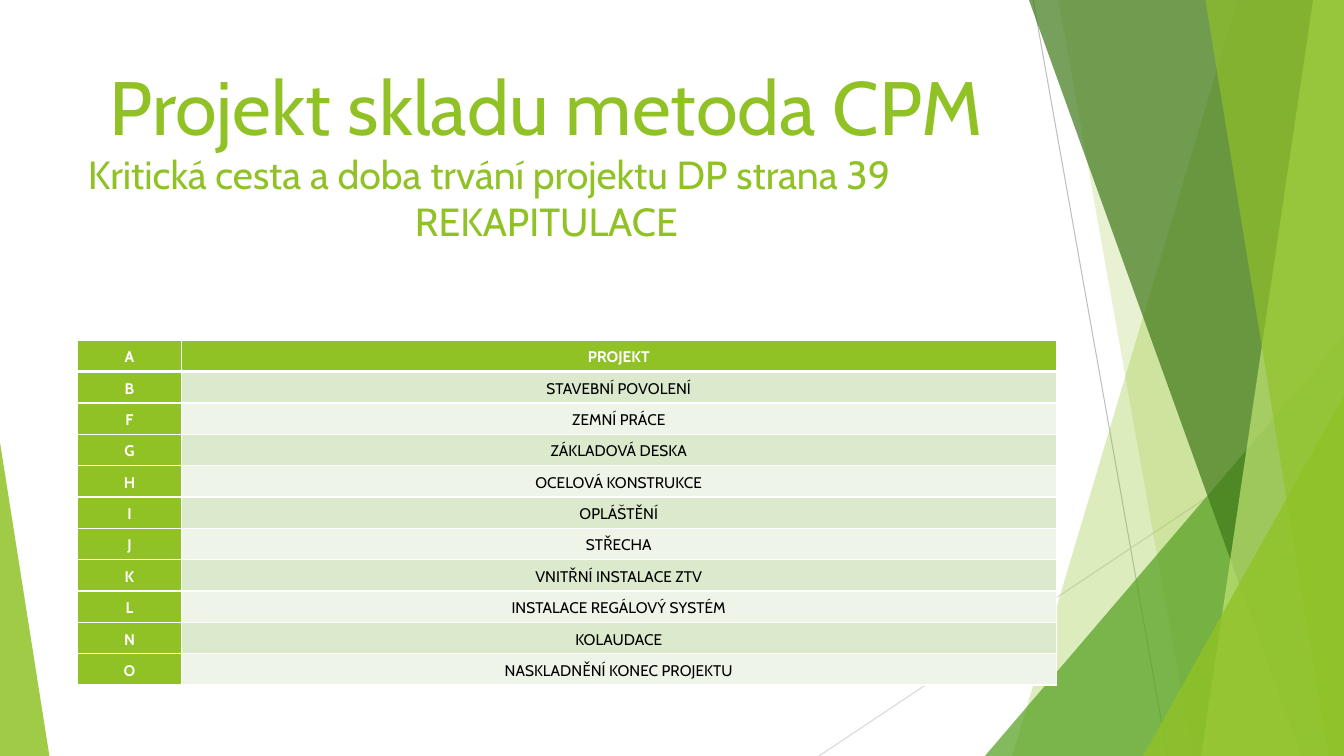
from lxml import etree
from pptx import Presentation
from pptx.dml.color import RGBColor
from pptx.enum.shapes import MSO_CONNECTOR, MSO_SHAPE
from pptx.enum.text import MSO_ANCHOR, MSO_AUTO_SIZE, PP_ALIGN
from pptx.oxml.ns import qn
from pptx.util import Pt

STRAIGHT = MSO_CONNECTOR.STRAIGHT
TRIANGLE = MSO_SHAPE.ISOSCELES_TRIANGLE
LEFT, CENTER = PP_ALIGN.LEFT, PP_ALIGN.CENTER
TOP, MIDDLE = MSO_ANCHOR.TOP, MSO_ANCHOR.MIDDLE

FONT = "Cabin"
WIDTH, HEIGHT = 960, 540
COLORS = {
    "green": "90C226", "leaf": "54A021", "forest": "3F7819", "lime": "C0E474",
    "band_dark": "DBE9CD", "band_light": "EEF4E8", "white": "FFFFFF",
    "black": "000000", "gray": "BFBFBF", "light_gray": "D9D9D9",
}


def rgb(name):
    return RGBColor.from_string(COLORS[name])


def style_font(p, size, color, bold=False):
    p.font.name = FONT
    p.font.size = Pt(size)
    p.font.bold = bold
    p.font.color.rgb = rgb(color)


prs = Presentation()
prs.slide_width, prs.slide_height = Pt(WIDTH), Pt(HEIGHT)
s = prs.slides.add_slide(prs.slide_layouts[5])

# Thin background lines
for x1, y1, x2, y2, color in [(738, 0, 834, HEIGHT, "gray"),
                              (WIDTH, 290, 585, HEIGHT, "light_gray")]:
    line = s.shapes.add_connector(STRAIGHT, Pt(x1), Pt(y1), Pt(x2), Pt(y2))
    line.line.color.rgb = rgb(color)
    line.line.width = Pt(0.75)
    etree.SubElement(line._element.spPr, qn("a:effectLst"))

# Facets: a band is (top x, bottom x) up to the right edge,
# a triangle is (left, top, width, apex) down to the bottom edge
facets = [
    ((884, 723), "green", 30),
    ((756, 852), "green", 20),
    ((703.5, 240, 256.5, 1), "leaf", 72),
    ((735, 929.5), "forest", 70),
    ((938, 858), "lime", 70),
    ((861, 949), "green", 65),
    ((816.5, 283, 143.5, 1), "green", 80),
    ((0, 316, 35.3, 0), "green", 85),
]
for geometry, color, opacity in facets:
    if len(geometry) == 2:
        top_x, bottom_x = geometry
        fb = s.shapes.build_freeform(Pt(top_x), Pt(0), scale=1.0)
        fb.add_line_segments([(Pt(WIDTH), Pt(0)), (Pt(WIDTH), Pt(HEIGHT)),
                              (Pt(bottom_x), Pt(HEIGHT))], close=True)
        sp = fb.convert_to_shape()
    else:
        x, y, w, apex = geometry
        sp = s.shapes.add_shape(TRIANGLE, Pt(x), Pt(y), Pt(w), Pt(HEIGHT - y))
        sp.adjustments[0] = apex
    sp.shadow.inherit = False
    sp.line.fill.background()
    sp.fill.solid()
    sp.fill.fore_color.rgb = rgb(color)
    clr = sp._element.spPr.find(qn("a:solidFill"))[0]
    etree.SubElement(clr, qn("a:alpha"), val=str(opacity * 1000))

# Title
title = s.shapes.title
title.left, title.top, title.width, title.height = Pt(55.5), Pt(39), Pt(669.5), Pt(307.5)
tf = title.text_frame
tf.word_wrap = True
tf.auto_size = MSO_AUTO_SIZE.NONE
tf.vertical_anchor = TOP
title_lines = [
    ("Projekt skladu metoda CPM", 54, CENTER),
    ("Kritická cesta a doba trvání projektu DP strana 39", 28, LEFT),
    ("REKAPITULACE", 28, CENTER),
]
tf.text = "\n".join(text for text, _, _ in title_lines)
for p, (_, size, align) in zip(tf.paragraphs, title_lines):
    p.alignment = align
    style_font(p, size, "green")

# Table of critical path activities
rows = [
    ("A", "PROJEKT"),
    ("B", "STAVEBNÍ POVOLENÍ"),
    ("F", "ZEMNÍ PRÁCE"),
    ("G", "ZÁKLADOVÁ DESKA"),
    ("H", "OCELOVÁ KONSTRUKCE"),
    ("I", "OPLÁŠTĚNÍ"),
    ("J", "STŘECHA"),
    ("K", "VNITŘNÍ INSTALACE ZTV"),
    ("L", "INSTALACE REGÁLOVÝ SYSTÉM"),
    ("N", "KOLAUDACE"),
    ("O", "NASKLADNĚNÍ KONEC PROJEKTU"),
]
col_widths, row_height = (74, 625), 22.4
table = s.shapes.add_table(len(rows), 2, Pt(55.5), Pt(243), Pt(sum(col_widths)),
                           Pt(row_height * len(rows))).table
for col, width in zip(table.columns, col_widths):
    col.width = Pt(width)
for i, row in enumerate(rows):
    table.rows[i].height = Pt(row_height)
    for j, text in enumerate(row):
        cell = table.cell(i, j)
        cell.text = text
        cell.vertical_anchor = MIDDLE
        cell.margin_left = cell.margin_right = Pt(3.6)
        cell.margin_top = cell.margin_bottom = 0
        heading = i == 0 or j == 0
        p = cell.text_frame.paragraphs[0]
        p.alignment = CENTER
        p.line_spacing = 1.15
        style_font(p, 11, "white" if heading else "black", heading)

        # Borders, thicker under the header row
        for side in ("lnL", "lnR", "lnT", "lnB"):
            thick = (i, side) in ((0, "lnB"), (1, "lnT"))
            ln = etree.SubElement(cell._tc.get_or_add_tcPr(), qn("a:" + side),
                                  w=str(Pt(3 if thick else 1)))
            border = etree.SubElement(ln, qn("a:solidFill"))
            etree.SubElement(border, qn("a:srgbClr"), val=COLORS["white"])

        band = "band_dark" if i % 2 else "band_light"
        cell.fill.solid()
        cell.fill.fore_color.rgb = rgb("green" if heading else band)

prs.save("out.pptx")
